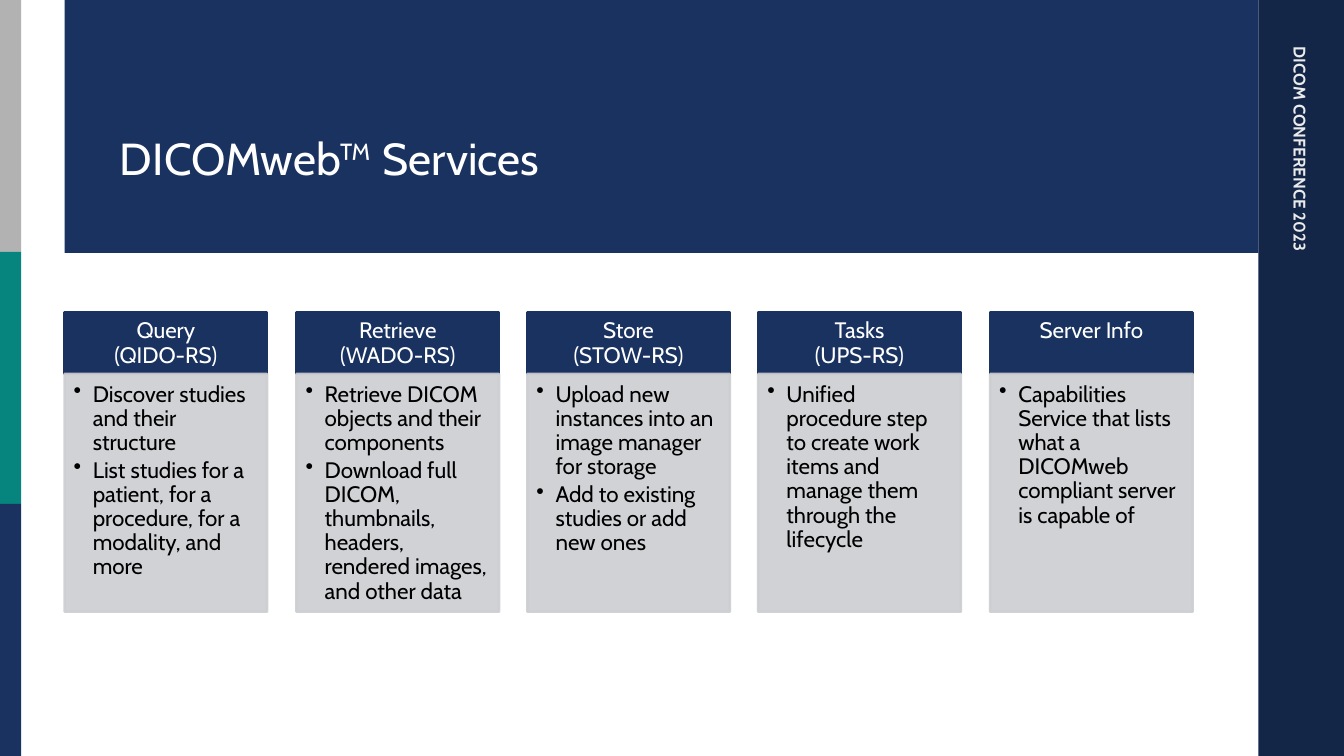
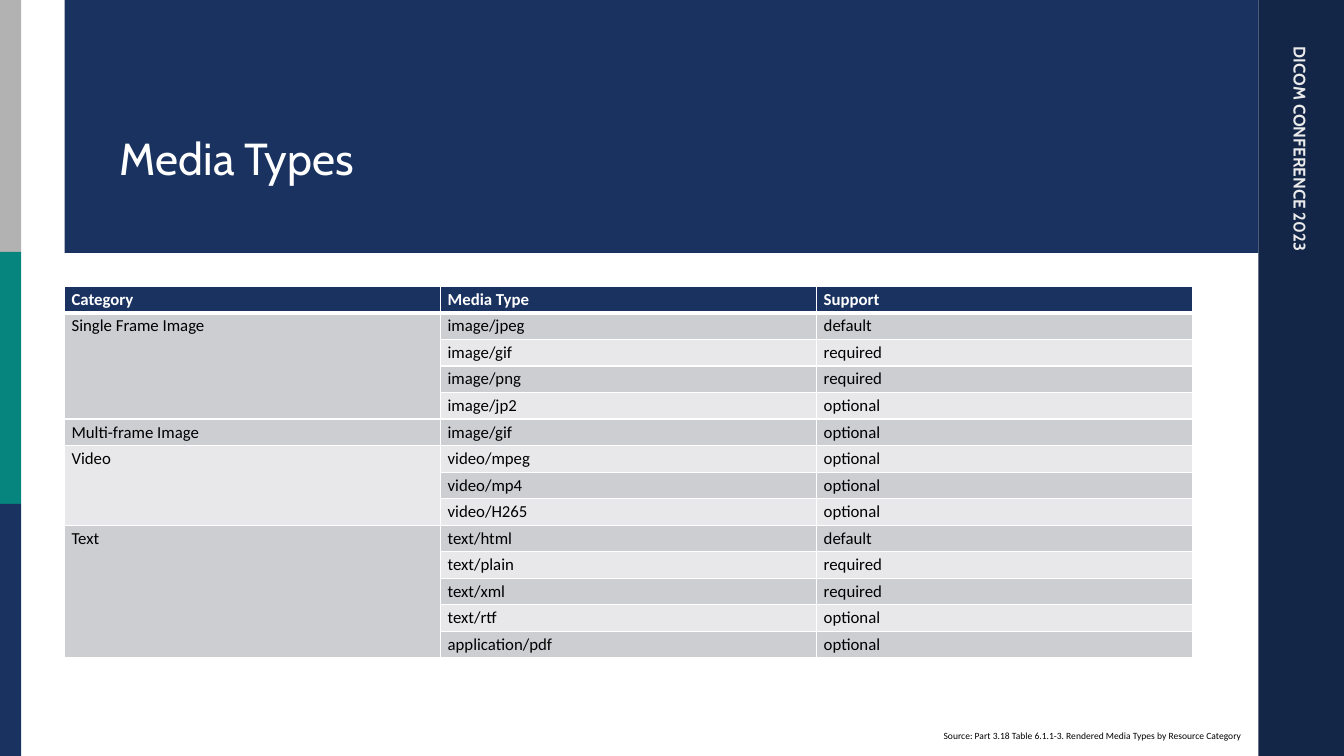
from copy import deepcopy
from dataclasses import dataclass
from typing import NamedTuple

from lxml import etree
from pptx import Presentation
from pptx.dml.color import RGBColor
from pptx.enum.shapes import MSO_SHAPE
from pptx.enum.text import MSO_ANCHOR, MSO_AUTO_SIZE, PP_ALIGN
from pptx.oxml.ns import qn
from pptx.util import Emu, Pt

RECTANGLE = MSO_SHAPE.RECTANGLE
TOP, MIDDLE, BOTTOM = MSO_ANCHOR.TOP, MSO_ANCHOR.MIDDLE, MSO_ANCHOR.BOTTOM
LEFT, CENTER = PP_ALIGN.LEFT, PP_ALIGN.CENTER
NO_AUTOFIT = MSO_AUTO_SIZE.NONE
TITLE_ONLY_LAYOUT = 5
EMU_PER_PX = 9144  # 100 px to the inch


@dataclass(frozen=True)
class Theme:
    navy: str = "1A3260"
    dark_navy: str = "142648"
    teal: str = "06847E"
    gray: str = "B2B2B2"
    band_dark: str = "CDCED2"
    band_light: str = "E8E8EA"
    white: str = "FFFFFF"
    off_white: str = "EBEBEB"
    black: str = "000000"
    heading_font: str = "Cabin"
    table_font: str = "Calibri"
    title_size: float = 32
    card_size: float = 16
    small_size: float = 12
    source_size: float = 6.8


THEME = Theme()


class Box(NamedTuple):
    left: int
    top: int
    width: int
    height: int


class Insets(NamedTuple):
    left: int = 10
    top: int = 5
    right: int = 10
    bottom: int = 5


@dataclass(frozen=True)
class Card:
    heading: str
    bullets: tuple[str, ...]


@dataclass(frozen=True)
class Category:
    name: str
    media_types: tuple[tuple[str, str], ...]


SLIDE_WIDTH, SLIDE_HEIGHT = 1333, 750
TITLE_BOX = Box(109, 77, 1075, 111)
CONFERENCE_BOX = Box(1062, 249, 455, 30)
SOURCE_BOX = Box(926, 719, 341, 21)
FRAME_BANDS = (
    (Box(1248, 0, 85, 750), THEME.dark_navy),
    (Box(0, 0, 21, 250), THEME.gray),
    (Box(0, 250, 21, 250), THEME.teal),
    (Box(0, 500, 21, 250), THEME.navy),
    (Box(64, 0, 1184, 251), THEME.navy),
)

CARD_LEFT, CARD_TOP, CARD_WIDTH = 64, 310, 201
CARD_RIGHT_END = 1183
HEADING_HEIGHT, BODY_HEIGHT = 61, 236
HEADING_INSETS = Insets(12, 7, 12, 7)
BODY_INSETS = Insets(9, 9, 12, 14)
BULLET_INDENT = 19
CARDS = (
    Card("Query\n(QIDO-RS)", (
        "Discover studies and their structure",
        "List studies for a patient, for a procedure, for a modality, and more")),
    Card("Retrieve\n(WADO-RS)", (
        "Retrieve DICOM objects and their components",
        "Download full DICOM, thumbnails, headers, rendered images, and other data")),
    Card("Store\n(STOW-RS)", (
        "Upload new instances into an image manager for storage",
        "Add to existing studies or add new ones")),
    Card("Tasks\n(UPS-RS)", (
        "Unified procedure step to create work items and manage them through the lifecycle",)),
    Card("Server Info", (
        "Capabilities Service that lists what a DICOMweb compliant server is capable of",)),
)

TABLE_LEFT, TABLE_TOP, COLUMN_WIDTH, ROW_HEIGHT = 64, 284, 373, 20
CELL_INSETS = Insets(7, 3, 7, 3)
TABLE_HEADINGS = ("Category", "Media Type", "Support")
CATEGORIES = (
    Category("Single Frame Image", (
        ("image/jpeg", "default"), ("image/gif", "required"),
        ("image/png", "required"), ("image/jp2", "optional"))),
    Category("Multi-frame Image", (("image/gif", "optional"),)),
    Category("Video", (
        ("video/mpeg", "optional"), ("video/mp4", "optional"), ("video/H265", "optional"))),
    Category("Text", (
        ("text/html", "default"), ("text/plain", "required"), ("text/xml", "required"),
        ("text/rtf", "optional"), ("application/pdf", "optional"))),
)


def px(value: int) -> Emu:
    return Emu(value * EMU_PER_PX)


def rgb(color: str) -> RGBColor:
    return RGBColor.from_string(color)


def place(shape, box: Box) -> None:
    shape.left, shape.top, shape.width, shape.height = map(px, box)


# Text
def write_text(text_frame, *texts: str, size: float, color: str = THEME.black,
               font: str = THEME.heading_font, bold: bool = False, align=LEFT,
               line_spacing: float = 1.0, space_after: float = 0,
               bulleted: bool = False) -> None:
    for index, text in enumerate(texts):
        paragraph = text_frame.add_paragraph() if index else text_frame.paragraphs[0]
        paragraph.text = text
        if bulleted:
            properties = paragraph._p.get_or_add_pPr()
            properties.set("marL", str(px(BULLET_INDENT)))
            properties.set("indent", str(-px(BULLET_INDENT)))
            etree.SubElement(properties, qn("a:buChar")).set("char", "•")
        paragraph.alignment = align
        paragraph.line_spacing = line_spacing
        paragraph.space_after = Pt(space_after)
        for run in paragraph.runs:
            run.font.name = font
            run.font.size = Pt(size)
            run.font.bold = bold
            run.font.color.rgb = rgb(color)
        # Line breaks take the format of the text around them
        for line_break in paragraph._p.findall(qn("a:br")):
            line_break.insert(0, deepcopy(paragraph.runs[0]._r.rPr))


def set_frame(text_frame, insets: Insets = Insets(), anchor=TOP) -> None:
    text_frame.word_wrap = True
    text_frame.auto_size = NO_AUTOFIT
    text_frame.vertical_anchor = anchor
    text_frame.margin_left, text_frame.margin_top = px(insets.left), px(insets.top)
    text_frame.margin_right, text_frame.margin_bottom = px(insets.right), px(insets.bottom)


def add_text(slide, box: Box, text: str, **text_format):
    shape = slide.shapes.add_textbox(*map(px, box))
    set_frame(shape.text_frame)
    write_text(shape.text_frame, text, **text_format)
    return shape


# Shapes
def add_rectangle(slide, box: Box, color: str, outlined: bool = False, opacity: int = 100):
    shape = slide.shapes.add_shape(RECTANGLE, *map(px, box))
    shape.shadow.inherit = False
    shape.fill.solid()
    shape.fill.fore_color.rgb = rgb(color)
    if outlined:
        shape.line.color.rgb = rgb(color)
        shape.line.width = Pt(1.75)
    else:
        shape.line.fill.background()
    if opacity < 100:
        for color_element in shape.element.spPr.iter(qn("a:srgbClr")):
            etree.SubElement(color_element, qn("a:alpha")).set("val", str(opacity * 1000))
    return shape


# Shared frame, kept on the layout
def move_frame_to_layout(slide) -> None:
    layout = slide.slide_layout
    place(layout.placeholders[0], TITLE_BOX)
    parts = [add_rectangle(slide, box, color) for box, color in FRAME_BANDS]
    conference = add_text(slide, CONFERENCE_BOX, "DICOM CONFERENCE 2023",
                          size=THEME.small_size, color=THEME.off_white, bold=True)
    conference.rotation = 90
    for shape_id, shape in enumerate([*parts, conference], start=100):
        shape.element.nvSpPr.cNvPr.set("id", str(shape_id))
        layout.shapes.element.append(shape.element)


def add_slide(presentation, title: str):
    slide = presentation.slides.add_slide(presentation.slide_layouts[TITLE_ONLY_LAYOUT])
    text_frame = slide.shapes.title.text_frame
    set_frame(text_frame, anchor=BOTTOM)
    write_text(text_frame, title, size=THEME.title_size, color=THEME.white)
    return slide


# Service cards
def add_card(slide, left: int, card: Card) -> None:
    heading = add_rectangle(slide, Box(left, CARD_TOP, CARD_WIDTH, HEADING_HEIGHT),
                            THEME.navy, outlined=True)
    set_frame(heading.text_frame, HEADING_INSETS)
    write_text(heading.text_frame, card.heading, size=THEME.card_size, color=THEME.white,
               align=CENTER, line_spacing=0.9)
    body = add_rectangle(slide, Box(left, CARD_TOP + HEADING_HEIGHT, CARD_WIDTH, BODY_HEIGHT),
                         THEME.band_dark, outlined=True, opacity=90)
    set_frame(body.text_frame, BODY_INSETS)
    write_text(body.text_frame, *card.bullets, size=THEME.card_size, line_spacing=0.9,
               space_after=2.4, bulleted=True)


def add_cards(slide) -> None:
    step = (CARD_RIGHT_END - CARD_WIDTH - CARD_LEFT) / (len(CARDS) - 1)
    for index, card in enumerate(CARDS):
        add_card(slide, round(CARD_LEFT + index * step), card)


# Media type table
def set_borders(cell, top: float, bottom: float) -> None:
    properties = cell._tc.get_or_add_tcPr()
    widths = {"a:lnL": 1, "a:lnR": 1, "a:lnT": top, "a:lnB": bottom}
    for index, (tag, width) in enumerate(widths.items()):
        line = etree.Element(qn(tag), w=str(Pt(width)))
        fill = etree.SubElement(line, qn("a:solidFill"))
        etree.SubElement(fill, qn("a:srgbClr")).set("val", THEME.white)
        properties.insert(index, line)


def format_cell(cell, row: int) -> None:
    cell.margin_left, cell.margin_top = px(CELL_INSETS.left), px(CELL_INSETS.top)
    cell.margin_right, cell.margin_bottom = px(CELL_INSETS.right), px(CELL_INSETS.bottom)
    cell.fill.solid()
    band = THEME.band_dark if row % 2 else THEME.band_light
    cell.fill.fore_color.rgb = rgb(band if row else THEME.navy)
    set_borders(cell, top=3 if row == 1 else 1, bottom=1 if row else 3)


def add_media_table(slide) -> None:
    rows = [TABLE_HEADINGS]
    for category in CATEGORIES:
        for index, media_type in enumerate(category.media_types):
            rows.append(("" if index else category.name, *media_type))
    columns = len(TABLE_HEADINGS)
    box = Box(TABLE_LEFT, TABLE_TOP, COLUMN_WIDTH * columns, ROW_HEIGHT * len(rows))
    table = slide.shapes.add_table(len(rows), columns, *map(px, box)).table
    table.horz_banding = False
    for row, texts in enumerate(rows):
        for column, text in enumerate(texts):
            cell = table.cell(row, column)
            format_cell(cell, row)
            if text:
                write_text(cell.text_frame, text, size=THEME.small_size, font=THEME.table_font,
                           color=THEME.black if row else THEME.white, bold=row == 0)
    first_row = 1
    for category in CATEGORIES:
        last_row = first_row + len(category.media_types) - 1
        if last_row > first_row:
            table.cell(first_row, 0).merge(table.cell(last_row, 0))
        first_row = last_row + 1


def main() -> None:
    presentation = Presentation()
    presentation.slide_width, presentation.slide_height = px(SLIDE_WIDTH), px(SLIDE_HEIGHT)

    services = add_slide(presentation, "DICOMweb™ Services")
    move_frame_to_layout(services)
    add_cards(services)

    media_types = add_slide(presentation, "Media Types")
    add_media_table(media_types)
    add_text(media_types, SOURCE_BOX,
             "Source: Part 3.18 Table 6.1.1-3. Rendered Media Types by Resource Category",
             size=THEME.source_size, font=THEME.table_font)

    presentation.save("out.pptx")


if __name__ == "__main__":
    main()
